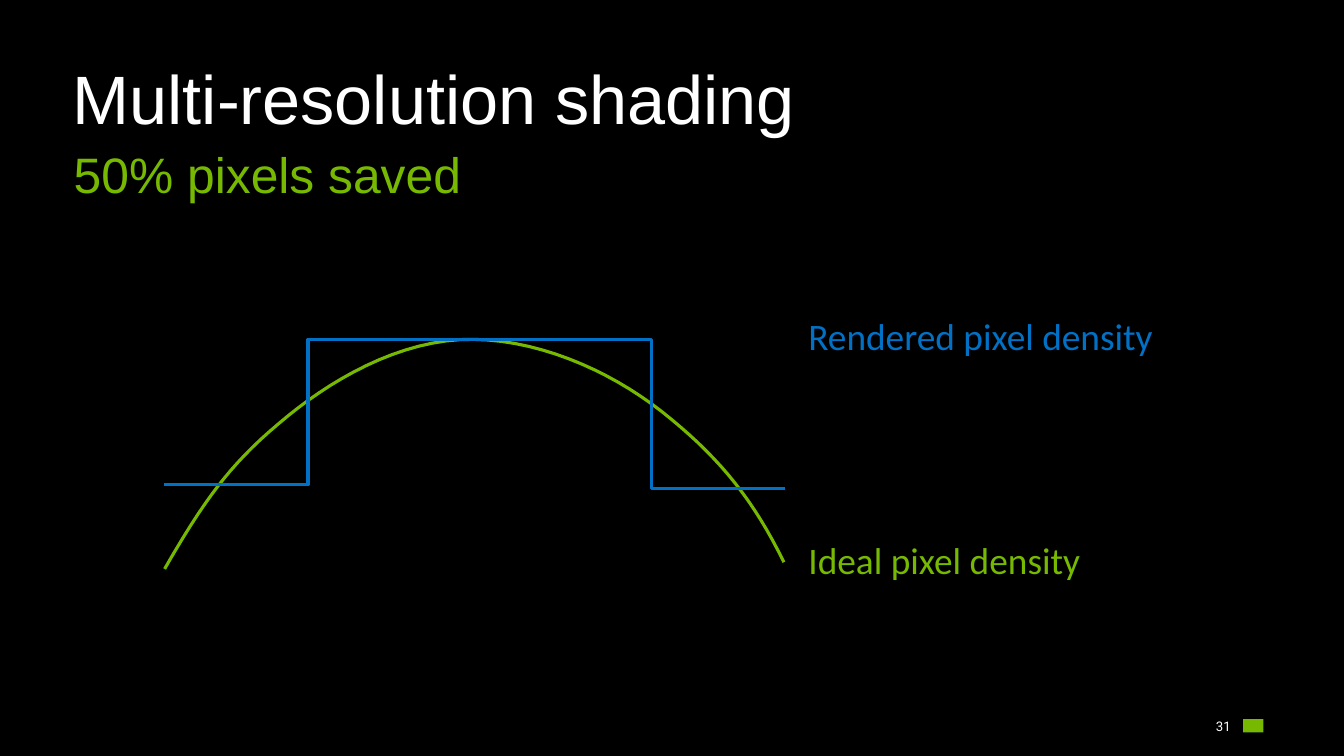
"""Build the multi-resolution shading slide with its pixel density curves."""
from pptx import Presentation
from pptx.dml.color import RGBColor
from pptx.enum.shapes import MSO_SHAPE
from pptx.enum.text import MSO_ANCHOR, PP_ALIGN
from pptx.util import Inches, Pt

BLACK = RGBColor(0x00, 0x00, 0x00)
WHITE = RGBColor(0xFF, 0xFF, 0xFF)
GREEN = RGBColor(0x76, 0xB9, 0x00)
BLUE = RGBColor(0x00, 0x71, 0xC5)

WIDTH, HEIGHT = 12, 6.75
HEAD_WIDTH = 10.91
LABEL_LEFT, LABEL_WIDTH, LABEL_HEIGHT = 7.12, 4.24, 0.63
CURVE_STEPS = 16

BACKDROP = (0, 0, WIDTH, HEIGHT)
BADGE = (11.1, 6.42, 0.18, 0.12)

TEXTS = [
    ("Multi-resolution shading", (0.55, 0.52, HEAD_WIDTH, 0.77),
     "Arial", 44, WHITE, MSO_ANCHOR.BOTTOM),
    ("50% pixels saved", (0.56, 1.29, HEAD_WIDTH, 0.57),
     "Arial", 32, GREEN, MSO_ANCHOR.TOP),
    ("Ideal pixel density", (LABEL_LEFT, 4.79, LABEL_WIDTH, LABEL_HEIGHT),
     "Calibri", 24, GREEN, MSO_ANCHOR.TOP),
    ("Rendered pixel density", (LABEL_LEFT, 2.79, LABEL_WIDTH, LABEL_HEIGHT),
     "Calibri", 24, BLUE, MSO_ANCHOR.TOP),
]
PAGE_NUMBER = ("31", (10.68, 6.39, 0.31, 0.18), "Roboto", 8.5, WHITE, MSO_ANCHOR.MIDDLE)

IDEAL_START = (1.47, 5.08)
IDEAL_CURVES = [
    ((1.81, 4.49), (2.04, 4.16), (2.48, 3.79)),
    ((2.92, 3.41), (3.57, 3.02), (4.23, 3.03)),
    ((4.89, 3.04), (5.55, 3.37), (5.99, 3.74)),
    ((6.44, 4.11), (6.73, 4.47), (7.00, 5.02)),
]
RENDERED = [(1.46, 4.33), (2.75, 4.33), (2.75, 3.03),
            (5.82, 3.03), (5.82, 4.36), (7.01, 4.36)]


def add_rect(slide, box, color):
    sp = slide.shapes.add_shape(MSO_SHAPE.RECTANGLE, *map(Inches, box))
    sp.shadow.inherit = False
    sp.fill.solid()
    sp.fill.fore_color.rgb = color
    sp.line.fill.background()


def add_text(slide, text, box, font, size, color, anchor, spacing=0.9):
    sp = slide.shapes.add_textbox(*map(Inches, box))
    tf = sp.text_frame
    tf.word_wrap = True
    tf.vertical_anchor = anchor
    tf.text = text
    p = tf.paragraphs[0]
    p.line_spacing = spacing
    f = p.runs[0].font
    f.name, f.size, f.color.rgb = font, Pt(size), color
    return tf


def bezier_points(start, curves):
    points = [start]
    for c1, c2, end in curves:
        ends = list(zip(points[-1], c1, c2, end))
        for i in range(1, CURVE_STEPS + 1):
            t = i / CURVE_STEPS
            u = 1 - t
            points.append(tuple(
                u**3 * a + 3 * u**2 * t * b + 3 * u * t**2 * c + t**3 * d
                for a, b, c, d in ends))
    return points


def add_path(slide, points, color):
    start, *rest = [(Inches(x), Inches(y)) for x, y in points]
    builder = slide.shapes.build_freeform(*start)
    builder.add_line_segments(rest, close=False)
    sp = builder.convert_to_shape()
    sp.shadow.inherit = False
    sp.fill.background()
    sp.line.color.rgb = color
    sp.line.width = Pt(2)


def main():
    prs = Presentation()
    prs.slide_width, prs.slide_height = Inches(WIDTH), Inches(HEIGHT)
    slide = prs.slides.add_slide(prs.slide_layouts[6])
    add_rect(slide, BACKDROP, BLACK)

    tf = add_text(slide, *PAGE_NUMBER, spacing=1.0)
    tf.margin_left = tf.margin_right = tf.margin_top = tf.margin_bottom = 0
    tf.paragraphs[0].alignment = PP_ALIGN.RIGHT
    add_rect(slide, BADGE, GREEN)
    for item in TEXTS:
        add_text(slide, *item)

    add_path(slide, bezier_points(IDEAL_START, IDEAL_CURVES), GREEN)
    add_path(slide, RENDERED, BLUE)
    prs.save("out.pptx")


if __name__ == "__main__":
    main()
